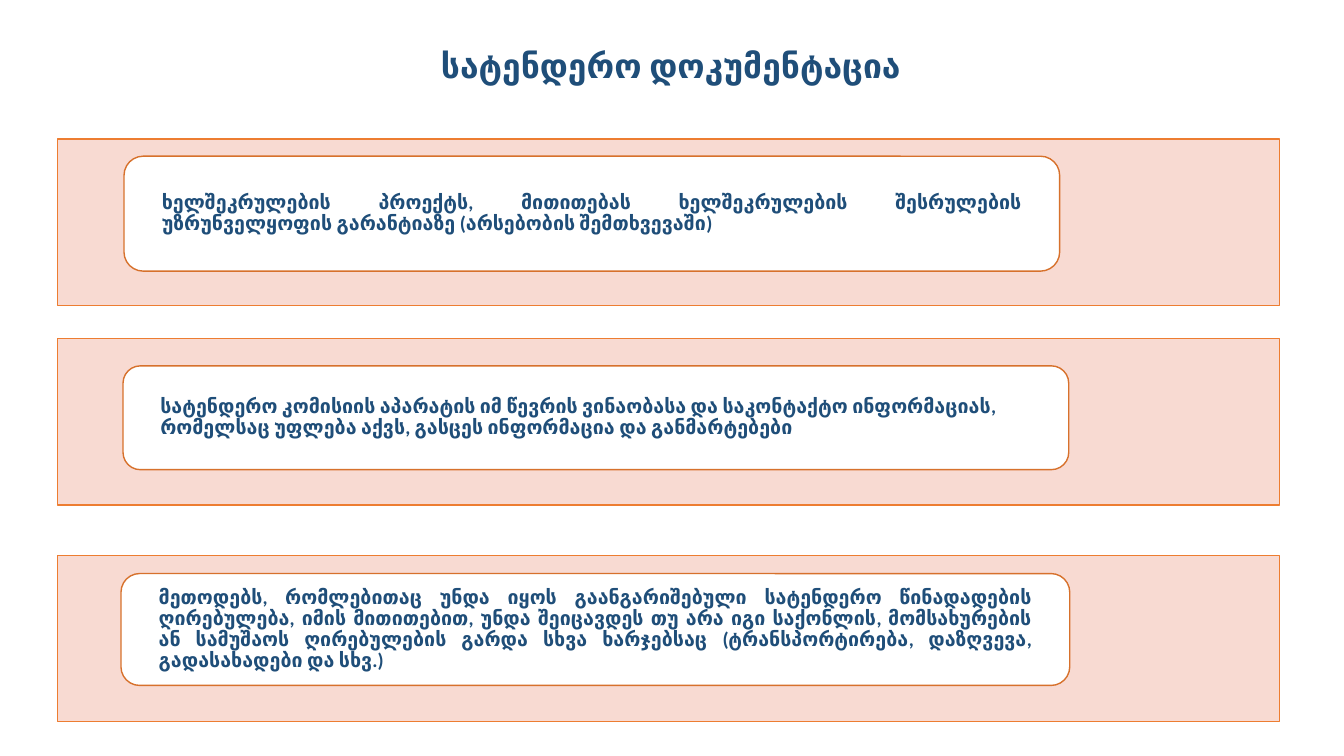
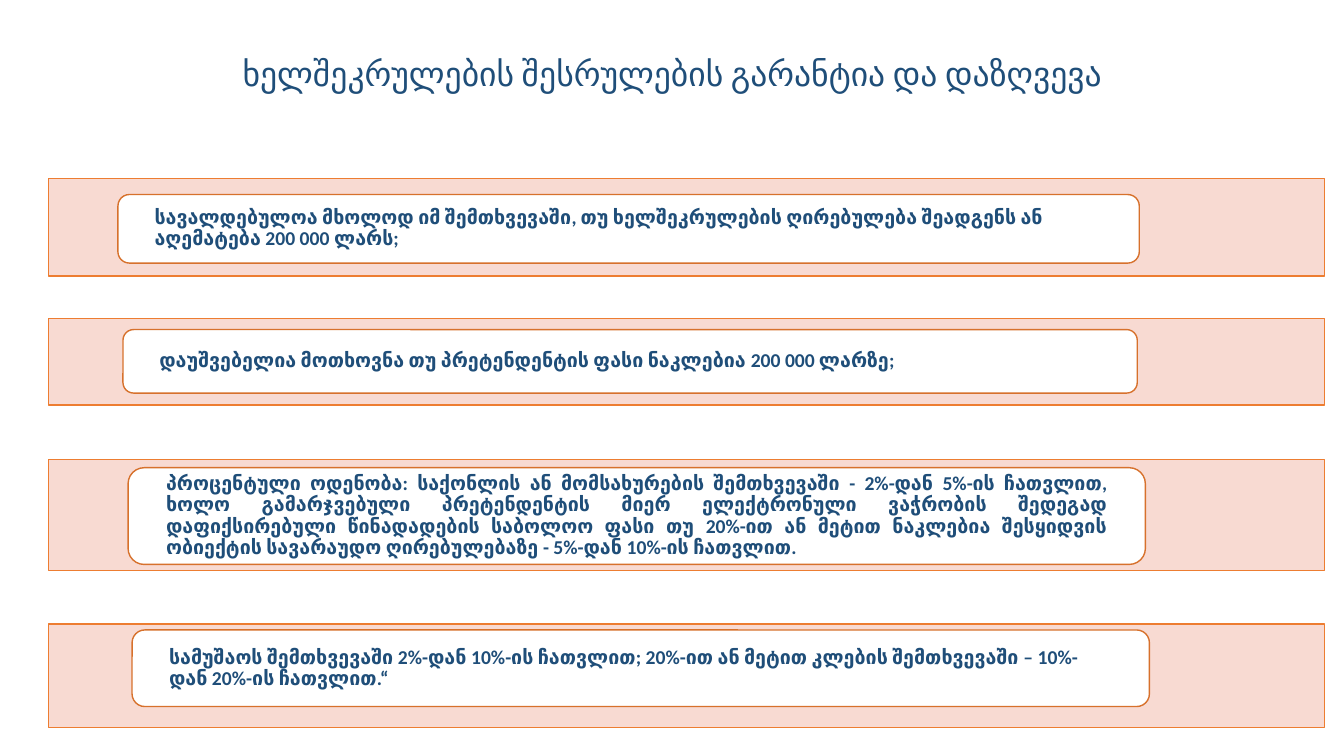
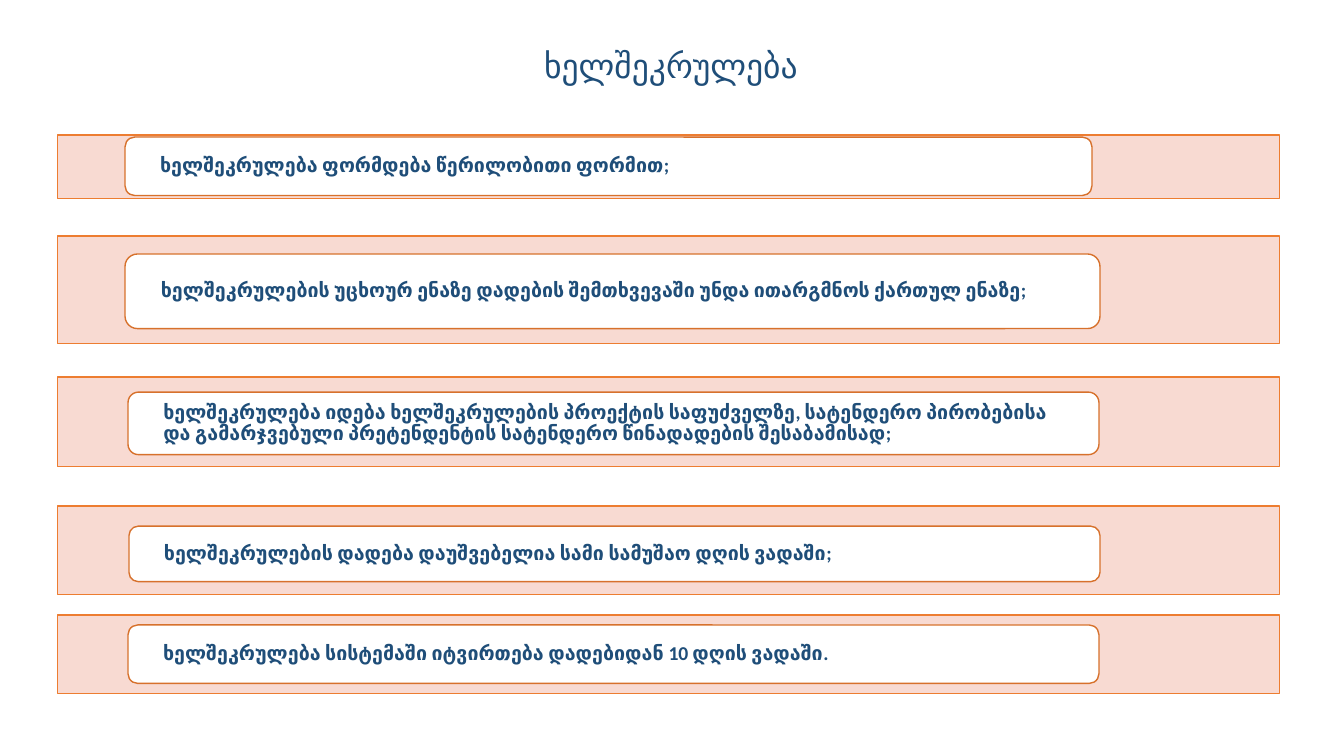
import pptx
import pptx.dml.color
import pptx.enum.shapes
import pptx.enum.text
import pptx.oxml.ns
import pptx.util
from lxml import etree

Inches = pptx.util.Inches
Pt = pptx.util.Pt
ALIGN = pptx.enum.text.PP_ALIGN
SHAPE = pptx.enum.shapes.MSO_SHAPE

COLORS = {
    "text": "1F4E79",
    "band": "F8D7CE",
    "band_line": "ED7D31",
    "card": "FFFFFF",
    "card_line": "D7712C",
}
FONT = "Calibri"
TITLE_SIZE, CARD_SIZE = 24, 14
TIGHT = 0.9
BAND_OPACITY = 90

# Each row: band (top, height), card (left, top, width, height), alignment, text
SLIDES = [
    {
        "title": "სატენდერო დოკუმენტაცია",
        "title_box": (0.95, 0.4, 11.41, 0.5),
        "title_bold": True,
        "title_spacing": 1.0,
        "band_x": (0.57, 12.12),
        "inset": 0.32,
        "rows": [
            ((1.38, 1.65), (1.23, 1.55, 9.28, 1.14), ALIGN.JUSTIFY,
             "ხელშეკრულების პროექტს, მითითებას ხელშეკრულების შესრულების "
             "უზრუნველყოფის გარანტიაზე (არსებობის შემთხვევაში)"),
            ((3.36, 1.65), (1.22, 3.63, 9.38, 1.03), ALIGN.LEFT,
             "სატენდერო კომისიის აპარატის იმ წევრის ვინაობასა და საკონტაქტო "
             "ინფორმაციას, რომელსაც უფლება აქვს, გასცეს ინფორმაცია და განმარტებები"),
            ((5.51, 1.65), (1.2, 5.69, 9.41, 1.11), ALIGN.JUSTIFY,
             "მეთოდებს, რომლებითაც უნდა იყოს გაანგარიშებული სატენდერო წინადადების "
             "ღირებულება, იმის მითითებით, უნდა შეიცავდეს თუ არა იგი საქონლის, "
             "მომსახურების ან სამუშაოს ღირებულების გარდა სხვა ხარჯებსაც "
             "(ტრანსპორტირება, დაზღვევა, გადასახადები და სხვ.)"),
        ],
    },
    {
        "title": "ხელშეკრულების შესრულების გარანტია და დაზღვევა",
        "title_box": (0.92, 0.45, 11.5, 0.6),
        "title_bold": False,
        "title_spacing": TIGHT,
        "band_x": (0.48, 12.66),
        "inset": 0.33,
        "rows": [
            ((1.77, 0.97), (1.17, 1.93, 10.13, 0.68), ALIGN.LEFT,
             "სავალდებულოა მხოლოდ იმ შემთხვევაში, თუ ხელშეკრულების ღირებულება "
             "შეადგენს ან აღემატება 200 000 ლარს;"),
            ((3.16, 0.86), (1.22, 3.27, 10.06, 0.63), ALIGN.LEFT,
             "დაუშვებელია მოთხოვნა თუ პრეტენდენტის ფასი ნაკლებია 200 000 ლარზე;"),
            ((4.56, 1.1), (1.27, 4.64, 10.09, 0.96), ALIGN.JUSTIFY,
             "პროცენტული ოდენობა: საქონლის ან მომსახურების შემთხვევაში - 2%-დან "
             "5%-ის ჩათვლით, ხოლო გამარჯვებული პრეტენდენტის მიერ ელექტრონული "
             "ვაჭრობის შედეგად დაფიქსირებული წინადადების საბოლოო ფასი თუ 20%-ით "
             "ან მეტით ნაკლებია შესყიდვის ობიექტის სავარაუდო ღირებულებაზე - "
             "5%-დან 10%-ის ჩათვლით."),
            ((6.19, 1.03), (1.31, 6.25, 10.09, 0.76), ALIGN.LEFT,
             "სამუშაოს შემთხვევაში 2%-დან 10%-ის ჩათვლით; 20%-ით ან მეტით კლების "
             "შემთხვევაში – 10%-დან 20%-ის ჩათვლით.“"),
        ],
    },
    {
        "title": "ხელშეკრულება",
        "title_box": (0.95, 0.4, 11.41, 0.5),
        "title_bold": False,
        "title_spacing": 1.0,
        "band_x": (0.57, 12.12),
        "inset": 0.32,
        "rows": [
            ((1.34, 0.63), (1.24, 1.36, 9.59, 0.58), ALIGN.LEFT,
             "ხელშეკრულება ფორმდება წერილობითი ფორმით;"),
            ((2.34, 1.07), (1.24, 2.52, 9.67, 0.74), ALIGN.LEFT,
             "ხელშეკრულების უცხოურ ენაზე დადების შემთხვევაში უნდა ითარგმნოს "
             "ქართულ ენაზე;"),
            ((3.74, 0.89), (1.27, 3.89, 9.63, 0.62), ALIGN.LEFT,
             "ხელშეკრულება იდება ხელშეკრულების პროექტის საფუძველზე, სატენდერო "
             "პირობებისა და გამარჯვებული პრეტენდენტის სატენდერო წინადადების "
             "შესაბამისად;"),
            ((5.02, 0.88), (1.28, 5.22, 9.63, 0.55), ALIGN.LEFT,
             "ხელშეკრულების დადება დაუშვებელია სამი სამუშაო დღის ვადაში;"),
            ((6.1, 0.78), (1.27, 6.2, 9.63, 0.58), ALIGN.LEFT,
             "ხელშეკრულება სისტემაში იტვირთება დადებიდან 10 დღის ვადაში."),
        ],
    },
]


def rgb(name):
    return pptx.dml.color.RGBColor.from_string(COLORS[name])


def write(shape, text, size, bold, align, spacing):
    frame = shape.text_frame
    frame.word_wrap = True
    frame.vertical_anchor = pptx.enum.text.MSO_ANCHOR.MIDDLE
    frame.text = text
    paragraph = frame.paragraphs[0]
    paragraph.alignment = align
    paragraph.line_spacing = spacing
    font = paragraph.runs[0].font
    font.name, font.size, font.bold = FONT, Pt(size), bold
    font.color.rgb = rgb("text")


def add_panel(slide, kind, box, color):
    """Add a filled shape outlined in the line colour that belongs to its fill."""
    panel = slide.shapes.add_shape(kind, *map(Inches, box))
    panel.shadow.inherit = False
    panel.fill.solid()
    panel.fill.fore_color.rgb = rgb(color)
    panel.line.color.rgb = rgb(color + "_line")
    panel.line.width = Pt(1)
    return panel


def add_band(slide, box):
    band = add_panel(slide, SHAPE.RECTANGLE, box, "band")
    qn = pptx.oxml.ns.qn
    fill_color = band.fill._xPr.find(qn("a:solidFill")).find(qn("a:srgbClr"))
    etree.SubElement(fill_color, qn("a:alpha")).set("val", str(BAND_OPACITY * 1000))


def add_card(slide, box, inset, align, text):
    card = add_panel(slide, SHAPE.ROUNDED_RECTANGLE, box, "card")
    frame = card.text_frame
    frame.margin_left = frame.margin_right = Inches(inset)
    frame.margin_top = frame.margin_bottom = 0
    write(card, text, CARD_SIZE, True, align, TIGHT)


def main():
    deck = pptx.Presentation()
    deck.slide_width, deck.slide_height = Inches(13.33), Inches(7.5)
    for content in SLIDES:
        slide = deck.slides.add_slide(deck.slide_layouts[6])
        title = slide.shapes.add_textbox(*map(Inches, content["title_box"]))
        write(title, content["title"], TITLE_SIZE, content["title_bold"],
              ALIGN.CENTER, content["title_spacing"])
        band_left, band_width = content["band_x"]
        for (band_top, band_height), card_box, align, text in content["rows"]:
            add_band(slide, (band_left, band_top, band_width, band_height))
            add_card(slide, card_box, content["inset"], align, text)
    deck.save("out.pptx")


if __name__ == "__main__":
    main()
